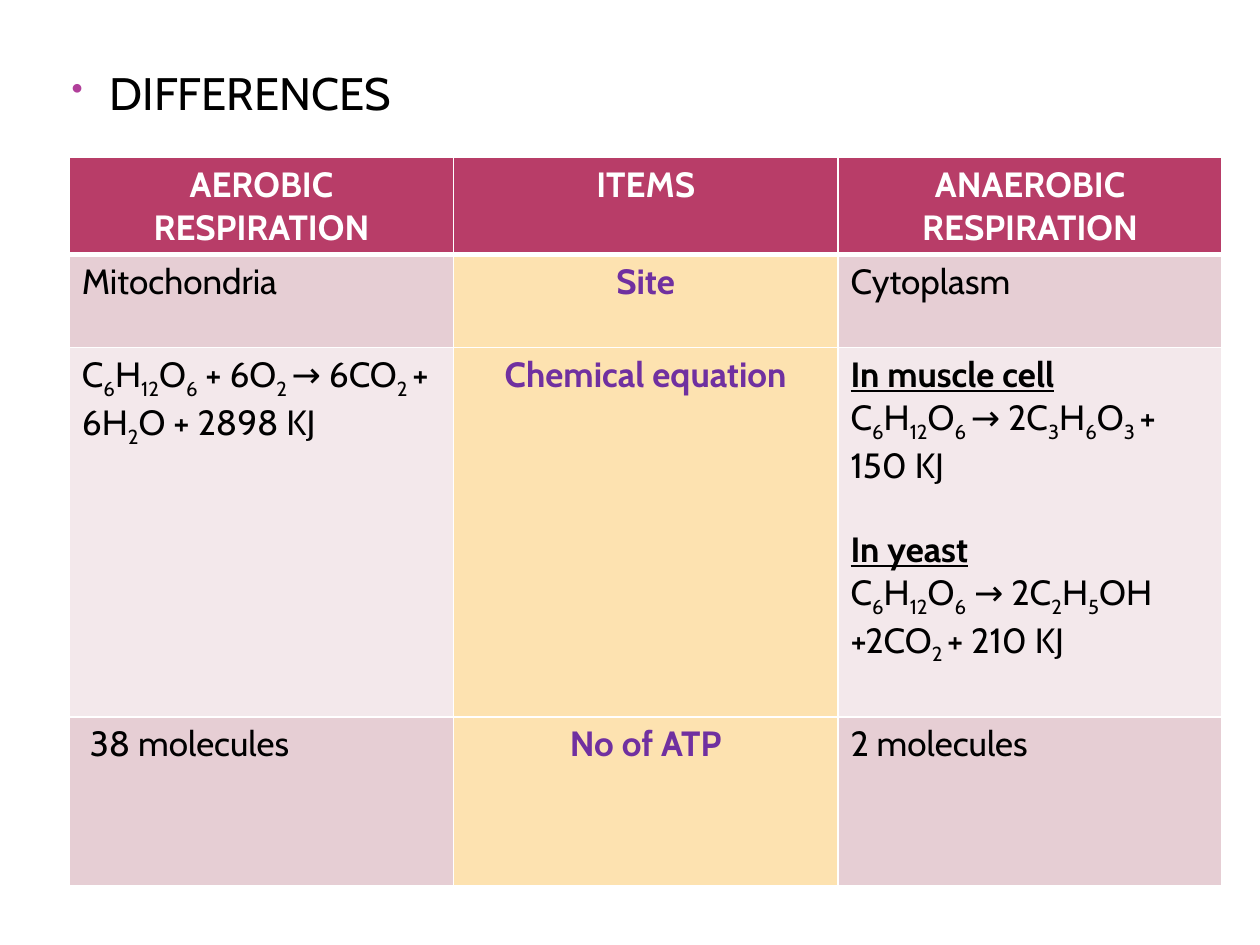
from dataclasses import dataclass

from lxml.etree import SubElement
from pptx import Presentation
from pptx.dml.color import RGBColor
from pptx.enum.text import PP_ALIGN
from pptx.oxml.ns import qn
from pptx.util import Inches, Pt


@dataclass(frozen=True)
class Theme:
    font: str = "Cabin"
    title_size: int = 26
    table_size: int = 20
    black: str = "000000"
    white: str = "FFFFFF"
    purple: str = "7030A0"
    bullet: str = "B13F9A"
    header: str = "B83D68"
    items: str = "FDE2B0"
    bands: tuple = ("E6CED4", "F3E8EB")


THEME = Theme()
HEADINGS = ("AEROBIC RESPIRATION", "ITEMS", "ANAEROBIC RESPIRATION")
AEROBIC_EQUATION = "C_6_H_12_O_6_ + 6O_2 _→ 6CO_2 _+ 6H_2_O + 2898 KJ"
MUSCLE_EQUATION = "C_6_H_12_O_6 _→ 2C_3_H_6_O_3 _+ 150 KJ"
YEAST_EQUATION = "C_6_H_12_O_6_ → 2C_2_H_5_OH +2CO_2 _+ 210 KJ"
COMPARISONS = (
    (("Mitochondria",), "Site", ("Cytoplasm",)),
    (
        (AEROBIC_EQUATION,),
        "Chemical equation",
        ("#In muscle cell", MUSCLE_EQUATION, "#In yeast", YEAST_EQUATION),
    ),
    ((" 38 molecules",), "No of ATP", ("2 molecules",)),
)
ROW_HEIGHTS = (0.77, 0.74, 2.93, 1.34)
COLUMN_WIDTH = 3.05


def style_paragraph(para, size, color, bold=False, underline=False):
    font = para.font
    font.name = THEME.font
    font.size = Pt(size)
    font.bold = bold
    font.underline = underline
    font.color.rgb = RGBColor.from_string(color)


def add_formula(para, text):
    for index, part in enumerate(text.split("_")):
        if part:
            span = para.add_run()
            span.text = part
            if index % 2:
                span._r.get_or_add_rPr().set("baseline", "-25000")


def add_bullet(para):
    properties = para._p.get_or_add_pPr()
    properties.set("marL", str(Inches(0.3)))
    properties.set("indent", str(Inches(-0.3)))
    color = SubElement(properties, qn("a:buClr"))
    SubElement(color, qn("a:srgbClr"), val=THEME.bullet)
    SubElement(properties, qn("a:buSzPct"), val="73000")
    SubElement(properties, qn("a:buChar"), char="•")


def add_title(slide, text):
    box = slide.shapes.add_textbox(Inches(0.47), Inches(0.47), Inches(7.92), Inches(0.65))
    box.text_frame.word_wrap = True
    para = box.text_frame.paragraphs[0]
    add_bullet(para)
    para.add_run().text = text
    style_paragraph(para, THEME.title_size, THEME.black)


def set_borders(cell, top=1, bottom=1):
    properties = cell._tc.get_or_add_tcPr()
    widths = {"a:lnL": 1, "a:lnR": 1, "a:lnT": top, "a:lnB": bottom}
    for position, (tag, width) in enumerate(widths.items()):
        line = SubElement(properties, qn(tag), w=str(Pt(width)))
        fill = SubElement(line, qn("a:solidFill"))
        SubElement(fill, qn("a:srgbClr"), val=THEME.white)
        properties.insert(position, line)


def fill_cell(cell, color):
    cell.fill.solid()
    cell.fill.fore_color.rgb = RGBColor.from_string(color)


def write_label(cell, text, color):
    para = cell.text_frame.paragraphs[0]
    para.alignment = PP_ALIGN.CENTER
    para.add_run().text = text
    style_paragraph(para, THEME.table_size, color, bold=True)


def write_details(cell, lines):
    frame = cell.text_frame
    for index, text in enumerate(lines):
        para = frame.add_paragraph() if index else frame.paragraphs[0]
        heading = text.startswith("#")
        if heading and index:
            para.space_before = Pt(24)
        add_formula(para, text.removeprefix("#"))
        style_paragraph(para, THEME.table_size, THEME.black, heading, heading)


def add_comparison_table(slide):
    frame = slide.shapes.add_table(
        len(ROW_HEIGHTS), len(HEADINGS), Inches(0.55), Inches(1.25),
        Inches(COLUMN_WIDTH * len(HEADINGS)), Inches(sum(ROW_HEIGHTS)),
    )
    table = frame.table
    table.horz_banding = False
    for row, height in zip(table.rows, ROW_HEIGHTS):
        row.height = Inches(height)
    for column in table.columns:
        column.width = Inches(COLUMN_WIDTH)
    for cell, heading in zip(table.rows[0].cells, HEADINGS):
        write_label(cell, heading, THEME.white)
        fill_cell(cell, THEME.header)
        set_borders(cell, bottom=3)
    for index, (aerobic, item, anaerobic) in enumerate(COMPARISONS):
        left, middle, right = cells = list(table.rows[index + 1].cells)
        write_details(left, aerobic)
        write_label(middle, item, THEME.purple)
        write_details(right, anaerobic)
        band = THEME.bands[index % 2]
        for cell, color in zip(cells, (band, THEME.items, band)):
            fill_cell(cell, color)
            set_borders(cell, top=1 if index else 3)


def main():
    deck = Presentation()
    deck.slide_width = Inches(10)
    deck.slide_height = Inches(7.5)
    slide = deck.slides.add_slide(deck.slide_layouts[6])
    add_title(slide, "DIFFERENCES")
    add_comparison_table(slide)
    deck.save("out.pptx")


if __name__ == "__main__":
    main()
